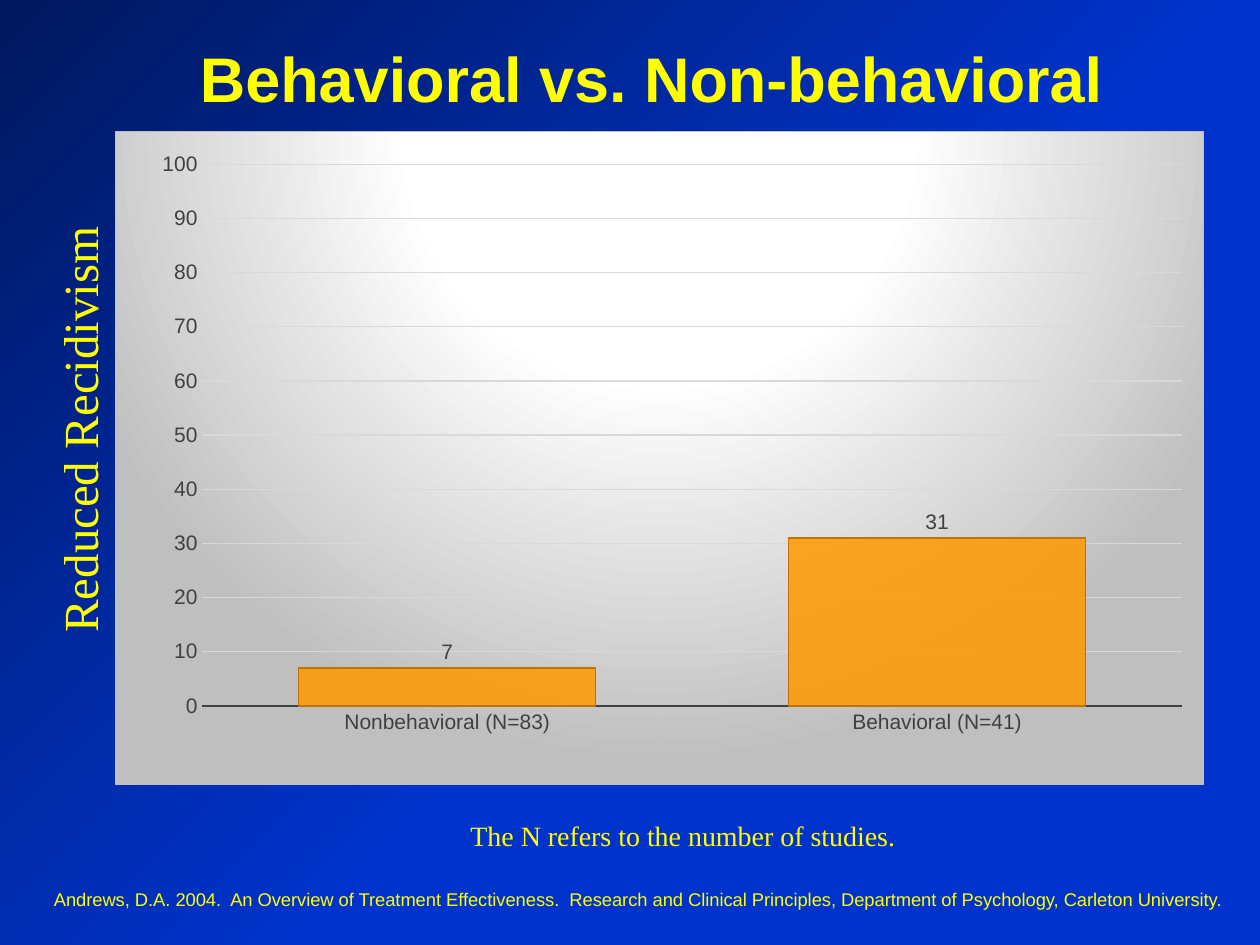
from dataclasses import dataclass

from lxml.etree import SubElement
from pptx import Presentation
from pptx.chart.data import CategoryChartData
from pptx.dml.color import RGBColor
from pptx.enum.chart import XL_CHART_TYPE, XL_LABEL_POSITION, XL_TICK_MARK
from pptx.enum.text import MSO_ANCHOR, MSO_AUTO_SIZE, PP_ALIGN
from pptx.oxml import parse_xml
from pptx.oxml.ns import nsdecls, qn
from pptx.util import Inches, Pt


@dataclass(frozen=True)
class Theme:
    text: str = "FFFF00"
    axis: str = "404040"
    grid: str = "D9D9D9"
    border: str = "BFBFBF"
    bar: str = "FF9900"
    bar_edge: str = "BF7300"
    bar_opacity: int = 85
    sans: str = "Arial"
    serif: str = "Times New Roman"
    title_size: float = 36
    side_size: float = 28
    note_size: float = 16
    chart_size: float = 12
    source_size: float = 10.5
    thin: float = 0.75
    thick: float = 1.5


THEME = Theme()
WIDTH, HEIGHT = Inches(10), Inches(7.5)

TITLE = "Behavioral vs. Non-behavioral"
STUDIES = {"Nonbehavioral (N=83)": 7, "Behavioral (N=41)": 31}

# Frames: left, top, width, height in percent of the slide
TITLE_FRAME = (9.2, 2.67, 85, 11.07)
CHART_FRAME = (9.1, 13.87, 86.5, 69.2)
CAPTIONS = [
    dict(text="Reduced Recidivism", frame=(-12, 40.13, 36.5, 7.6),
         font=THEME.serif, size=THEME.side_size, rotation=270, space_before=50),
    dict(text="Andrews, D.A. 2004.  An Overview of Treatment Effectiveness.  "
              "Research and Clinical Principles, Department of Psychology, "
              "Carleton University.",
         frame=(3.3, 93.33, 96.7, 3.73),
         font=THEME.sans, size=THEME.source_size, space_before=50),
    dict(text="The N refers to the number of studies.", frame=(29.2, 86, 50, 4.93),
         font=THEME.serif, size=THEME.note_size, align=PP_ALIGN.CENTER),
]

# Plot area: shares of the chart
PLOT = dict(x=0.08, y=0.05, w=0.9, h=0.83)

# Gradients: (position, colour, opacity) stops in percent, and the focus rectangle
BACKGROUND = ([(44, "0033CC", 83), (100, "00185E", 100)],
              dict(l=100, t=100, r=0, b=0))
CHART_FILL = ([(0, "FFFFFF", 100), (39, "FFFFFF", 100), (100, "BFBFBF", 100)],
              dict(l=50, t=-80, r=50, b=180))


def place(frame):
    """Turn percentages of the slide into lengths."""
    return [int(side * share / 100)
            for side, share in zip((WIDTH, HEIGHT, WIDTH, HEIGHT), frame)]


def set_alpha(color, percent):
    SubElement(color, qn("a:alpha"), val=str(percent * 1000))


def circular_gradient(stops, focus):
    gradient = parse_xml(f'<a:gradFill {nsdecls("a")} rotWithShape="1"/>')
    stop_list = SubElement(gradient, qn("a:gsLst"))
    for position, color, opacity in stops:
        stop = SubElement(stop_list, qn("a:gs"), pos=str(position * 1000))
        value = SubElement(stop, qn("a:srgbClr"), val=color)
        if opacity < 100:
            set_alpha(value, opacity)
    circle = SubElement(gradient, qn("a:path"), path="circle")
    SubElement(circle, qn("a:fillToRect"),
               {side: str(share * 1000) for side, share in focus.items()})
    return gradient


def style_font(font, name, size, color, bold=False):
    font.name, font.size, font.bold = name, Pt(size), bold
    font.color.rgb = RGBColor.from_string(color)


def style_line(line, color, width):
    line.color.rgb = RGBColor.from_string(color)
    line.width = Pt(width)


def write(paragraph, text, font, size, align=None, bold=False):
    paragraph.alignment = align
    run = paragraph.add_run()
    run.text = text
    style_font(run.font, font, size, THEME.text, bold)


def paint_background(slide):
    slide.background.fill.solid()
    solid = slide.element.xpath(".//p:bgPr/a:solidFill")[0]
    solid.getparent().replace(solid, circular_gradient(*BACKGROUND))


def add_title(slide):
    title = slide.shapes.title
    title.left, title.top, title.width, title.height = place(TITLE_FRAME)
    title.text_frame.vertical_anchor = MSO_ANCHOR.MIDDLE
    write(title.text_frame.paragraphs[0], TITLE, THEME.sans, THEME.title_size,
          PP_ALIGN.CENTER, bold=True)


def add_caption(slide, text, frame, font, size, align=None, rotation=0, space_before=0):
    """Add a text box; space_before is a percentage of the line."""
    box = slide.shapes.add_textbox(*place(frame))
    box.rotation = rotation
    box.text_frame.word_wrap = True
    box.text_frame.auto_size = MSO_AUTO_SIZE.SHAPE_TO_FIT_TEXT
    write(box.text_frame.paragraphs[0], text, font, size, align)
    if space_before:
        properties = box.element.xpath(".//a:p")[0].get_or_add_pPr()
        spacing = SubElement(properties, qn("a:spcBef"))
        SubElement(spacing, qn("a:spcPct"), val=str(space_before * 1000))


def style_axes(chart):
    for axis in (chart.category_axis, chart.value_axis):
        axis.major_tick_mark = axis.minor_tick_mark = XL_TICK_MARK.NONE
        style_font(axis.tick_labels.font, THEME.sans, THEME.chart_size, THEME.axis)
    style_line(chart.category_axis.format.line, THEME.axis, THEME.thick)
    values = chart.value_axis
    values.minimum_scale, values.maximum_scale, values.major_unit = 0, 100, 10
    values.format.line.fill.background()
    style_line(values.major_gridlines.format.line, THEME.grid, THEME.thin)


def style_bars(chart):
    plot = chart.plots[0]
    plot.gap_width = 65
    plot.vary_by_categories = False
    bars = plot.series[0]
    bars.format.fill.solid()
    bars.format.fill.fore_color.rgb = RGBColor.from_string(THEME.bar)
    bar_color = chart.element.xpath(".//c:ser/c:spPr/a:solidFill/a:srgbClr")[0]
    set_alpha(bar_color, THEME.bar_opacity)
    style_line(bars.format.line, THEME.bar_edge, THEME.thin)
    labels = bars.data_labels
    labels.show_value = True
    labels.position = XL_LABEL_POSITION.OUTSIDE_END
    style_font(labels.font, THEME.sans, THEME.chart_size, THEME.axis)


def frame_chart(chart):
    """Fill and border the chart area, and fix the inner plot area."""
    properties = parse_xml(f'<c:spPr {nsdecls("c", "a")}/>')
    properties.append(circular_gradient(*CHART_FILL))
    line = SubElement(properties, qn("a:ln"), w=str(Pt(THEME.thin)))
    solid = SubElement(line, qn("a:solidFill"))
    SubElement(solid, qn("a:srgbClr"), val=THEME.border)
    chart.element.find(qn("c:chart")).addnext(properties)

    area = chart.element.xpath("c:chart/c:plotArea")[0]
    for layout in area.findall(qn("c:layout")):
        area.remove(layout)
    layout = parse_xml(f'<c:layout {nsdecls("c")}/>')
    manual = SubElement(layout, qn("c:manualLayout"))
    settings = dict(layoutTarget="inner", xMode="edge", yMode="edge", **PLOT)
    for name, value in settings.items():
        SubElement(manual, qn(f"c:{name}"), val=str(value))
    area.insert(0, layout)


def add_recidivism_chart(slide):
    data = CategoryChartData()
    data.categories = list(STUDIES)
    data.add_series("Series 1", list(STUDIES.values()))
    chart = slide.shapes.add_chart(
        XL_CHART_TYPE.COLUMN_CLUSTERED, *place(CHART_FRAME), data).chart
    chart.has_legend = chart.has_title = False
    style_font(chart.font, THEME.sans, THEME.chart_size, THEME.axis)
    style_axes(chart)
    style_bars(chart)
    frame_chart(chart)


presentation = Presentation()
presentation.slide_width, presentation.slide_height = WIDTH, HEIGHT
slide = presentation.slides.add_slide(presentation.slide_layouts[5])
paint_background(slide)
add_title(slide)
add_recidivism_chart(slide)
for caption in CAPTIONS:
    add_caption(slide, **caption)
presentation.save("out.pptx")
